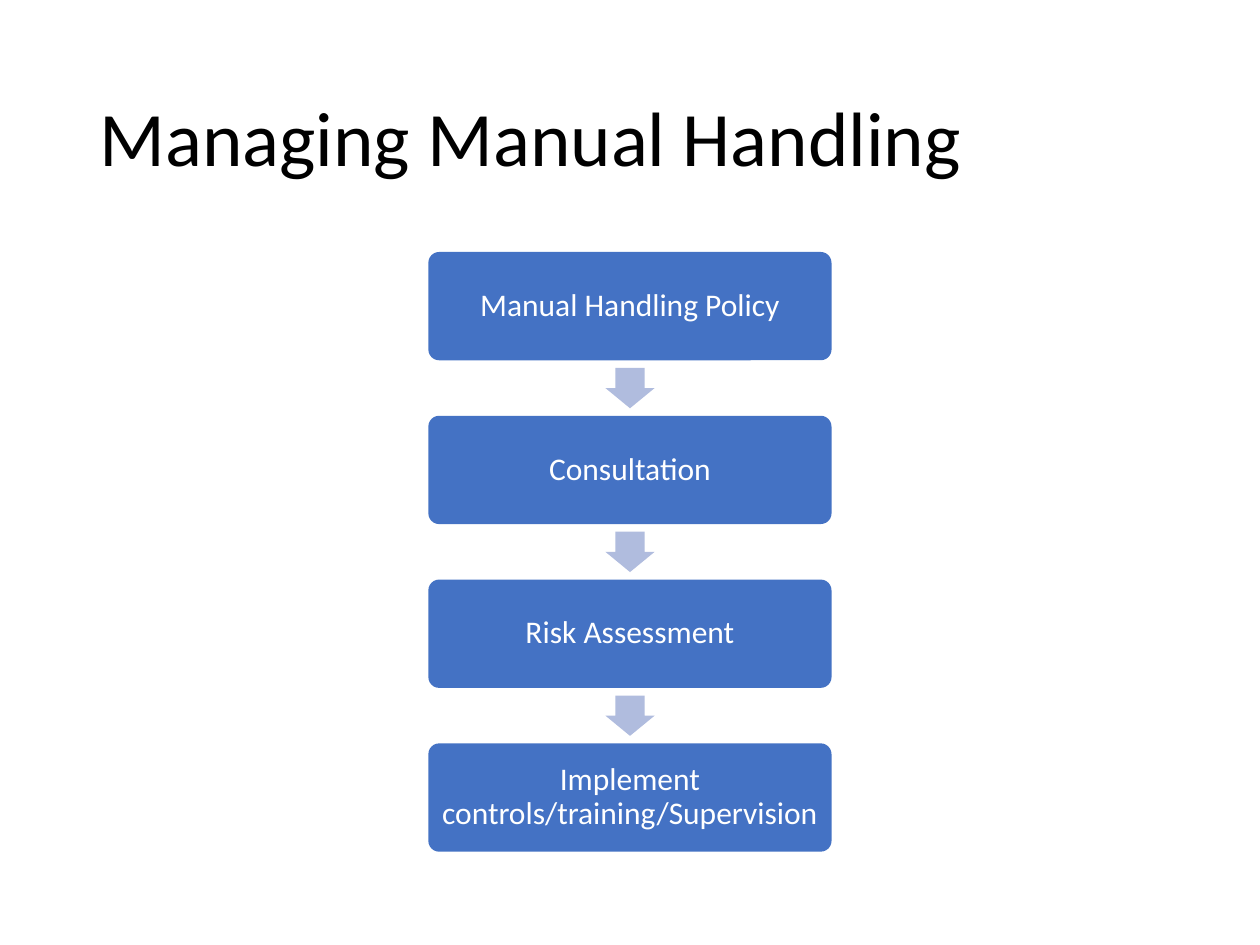
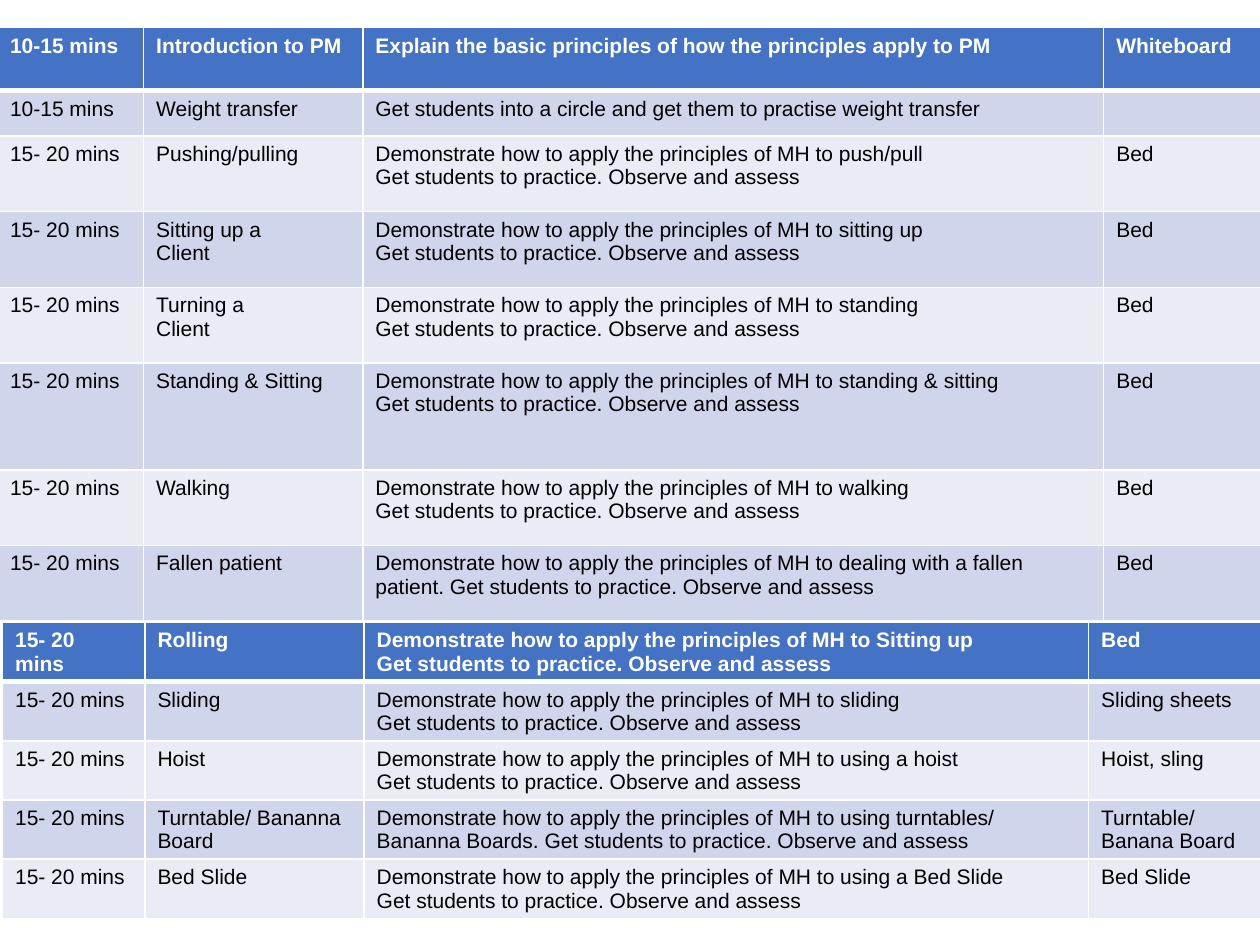
from dataclasses import dataclass
from typing import NamedTuple

from lxml.etree import SubElement
from pptx import Presentation
from pptx.dml.color import RGBColor
from pptx.enum.shapes import MSO_SHAPE
from pptx.enum.text import MSO_ANCHOR, PP_ALIGN
from pptx.oxml.ns import qn
from pptx.util import Inches, Pt

# Shared colours and fonts
BLUE, ARROW_BLUE = "4472C4", "B0BCDE"
BAND_DARK, BAND_LIGHT = "CFD5EA", "E9EBF5"
WHITE, BLACK = "FFFFFF", "000000"
HEADING_FONT, TABLE_FONT = "Calibri", "Arial"

PRACTICE = "Get students to practice. Observe and assess"
USUAL_TIME = "15- 20 mins"


class Session(NamedTuple):
    time: str
    topic: str
    activity: str
    equipment: str


@dataclass
class Timetable:
    left: float
    top: float
    columns: list[float]
    rows: list[float]
    sessions: list[Session]


def demonstrate(skill: str, joint: str = "\n") -> str:
    return f"Demonstrate how to apply the principles of MH to {skill}{joint}{PRACTICE}"


STEPS = [
    "Manual Handling Policy",
    "Consultation",
    "Risk Assessment",
    "Implement controls/training/Supervision",
]

TIMETABLES = [
    Timetable(-0.02, 0.22, [1.16, 1.74, 5.88, 1.36],
              [0.5, 0.36, 0.6, 0.6, 0.6, 0.85, 0.6, 0.6], [
        Session("10-15 mins", "Introduction to PM",
                "Explain the basic principles of how the principles apply to PM", "Whiteboard"),
        Session("10-15 mins", "Weight transfer",
                "Get students into a circle and get them to practise weight transfer", ""),
        Session(USUAL_TIME, "Pushing/pulling", demonstrate("push/pull"), "Bed"),
        Session(USUAL_TIME, "Sitting up a\nClient", demonstrate("sitting up"), "Bed"),
        Session(USUAL_TIME, "Turning a\nClient", demonstrate("standing"), "Bed"),
        Session(USUAL_TIME, "Standing & Sitting", demonstrate("standing & sitting"), "Bed"),
        Session(USUAL_TIME, "Walking", demonstrate("walking"), "Bed"),
        Session(USUAL_TIME, "Fallen patient",
                demonstrate("dealing with a fallen patient.", " "), "Bed"),
    ]),
    Timetable(0.02, 4.94, [1.13, 1.74, 5.75, 1.38], [0.47] * 5, [
        Session("15- 20\nmins", "Rolling", demonstrate("Sitting up"), "Bed"),
        Session(USUAL_TIME, "Sliding", demonstrate("sliding"), "Sliding sheets"),
        Session(USUAL_TIME, "Hoist", demonstrate("using a hoist"), "Hoist, sling"),
        Session(USUAL_TIME, "Turntable/ Bananna Board",
                demonstrate("using turntables/ Bananna Boards.", " "), "Turntable/\nBanana Board"),
        Session(USUAL_TIME, "Bed Slide", demonstrate("using a Bed Slide"), "Bed Slide"),
    ]),
]


def rgb(color: str) -> RGBColor:
    return RGBColor.from_string(color)


def write(frame, text: str, *, size: float, font: str, color: str, bold: bool = False,
          align=PP_ALIGN.LEFT, spacing: float = 1.0) -> None:
    """Fill a text frame, one paragraph for each line of text."""
    for index, line in enumerate(text.split("\n")):
        para = frame.add_paragraph() if index else frame.paragraphs[0]
        para.alignment, para.line_spacing = align, spacing
        if line:
            span = para.add_run()
            span.text = line
            span.font.size, span.font.name, span.font.bold = Pt(size), font, bold
            span.font.color.rgb = rgb(color)


def add_block(slide, kind, left: float, top: float, width: float, height: float,
              fill: str, adjustments: list[float]):
    box = slide.shapes.add_shape(kind, Inches(left), Inches(top), Inches(width), Inches(height))
    box.shadow.inherit = False
    box.fill.solid()
    box.fill.fore_color.rgb = rgb(fill)
    box.line.fill.background()
    for index, value in enumerate(adjustments):
        box.adjustments[index] = value
    return box


def set_border(cell, side: str, points: float) -> None:
    line = SubElement(cell._tc.get_or_add_tcPr(), qn(f"a:ln{side}"), w=str(Pt(points)))
    SubElement(SubElement(line, qn("a:solidFill")), qn("a:srgbClr"), val=WHITE)


def add_timetable(slide, plan: Timetable) -> None:
    table = slide.shapes.add_table(
        len(plan.rows), len(plan.columns), Inches(plan.left), Inches(plan.top),
        Inches(sum(plan.columns)), Inches(sum(plan.rows))).table
    for column, width in zip(table.columns, plan.columns):
        column.width = Inches(width)
    for index, (height, session) in enumerate(zip(plan.rows, plan.sessions)):
        table.rows[index].height = Inches(height)
        header = index == 0
        fill = BLUE if header else BAND_DARK if index % 2 else BAND_LIGHT
        # The line under the header is thicker than the rest
        borders = {"L": 1, "R": 1, "T": 3 if index == 1 else 1, "B": 3 if header else 1}
        for cell, text in zip(table.rows[index].cells, session):
            for side, points in borders.items():
                set_border(cell, side, points)
            cell.fill.solid()
            cell.fill.fore_color.rgb = rgb(fill)
            cell.margin_bottom = 0
            write(cell.text_frame, text, size=12, font=TABLE_FONT,
                  color=WHITE if header else BLACK, bold=header)


def build_process_slide(deck) -> None:
    slide = deck.slides.add_slide(deck.slide_layouts[5])
    title = slide.shapes.title
    title.left, title.top = Inches(0.69), Inches(0.4)
    title.width, title.height = Inches(8.62), Inches(1.45)
    title.text_frame.vertical_anchor = MSO_ANCHOR.MIDDLE
    write(title.text_frame, "Managing Manual Handling", size=44, font=HEADING_FONT,
          color=BLACK, spacing=0.9)

    # Steps from top to bottom, with an arrow in each gap
    first_top, pitch, width, height = 2, 1.3, 3.2, 0.86
    arrow_width, arrow_height = 0.39, 0.32
    arrow_gap = (pitch - height - arrow_height) / 2
    for index, step in enumerate(STEPS):
        top = first_top + index * pitch
        if index:
            add_block(slide, MSO_SHAPE.DOWN_ARROW, (10 - arrow_width) / 2,
                      top - arrow_gap - arrow_height, arrow_width, arrow_height,
                      ARROW_BLUE, [0.6, 0.5])
        box = add_block(slide, MSO_SHAPE.ROUNDED_RECTANGLE, (10 - width) / 2, top,
                        width, height, BLUE, [0.1])
        frame = box.text_frame
        frame.word_wrap, frame.vertical_anchor = True, MSO_ANCHOR.MIDDLE
        frame.margin_left = frame.margin_right = Inches(0.08)
        write(frame, step, size=18, font=HEADING_FONT, color=WHITE,
              align=PP_ALIGN.CENTER, spacing=0.9)


def build_timetable_slide(deck) -> None:
    slide = deck.slides.add_slide(deck.slide_layouts[6])
    for plan in TIMETABLES:
        add_timetable(slide, plan)


def main() -> None:
    deck = Presentation()
    deck.slide_width, deck.slide_height = Inches(10), Inches(7.5)
    build_process_slide(deck)
    build_timetable_slide(deck)
    deck.save("out.pptx")


if __name__ == "__main__":
    main()
